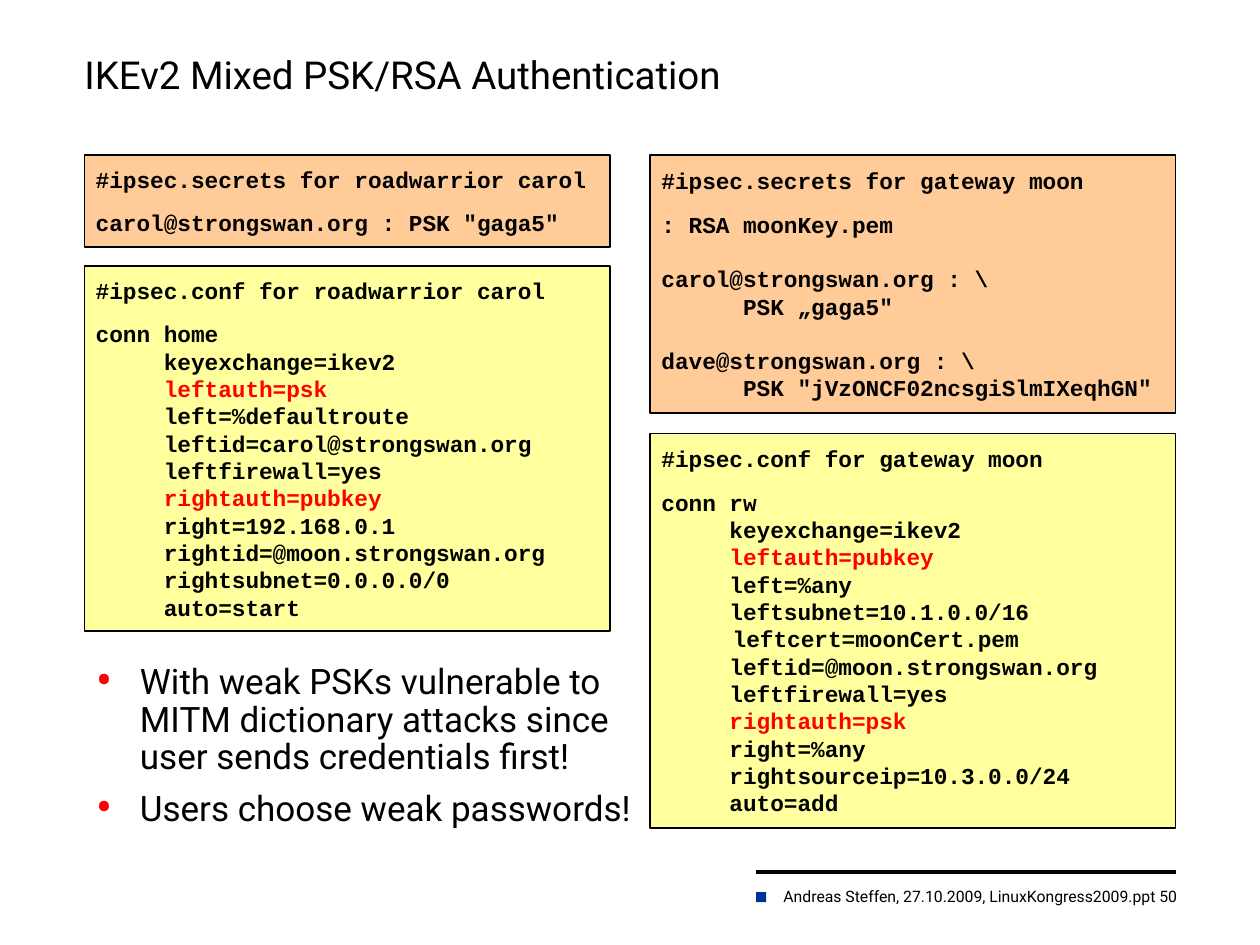
from lxml import etree
from pptx import Presentation
from pptx.dml.color import RGBColor
from pptx.enum.shapes import MSO_CONNECTOR, MSO_SHAPE
from pptx.enum.text import MSO_ANCHOR, MSO_AUTO_SIZE, PP_ALIGN
from pptx.oxml.ns import qn
from pptx.util import Inches, Pt

COLORS = {"text": "000000", "accent": "FF0000", "marker": "003399",
          "secrets": "FFCC99", "conf": "FFFF9D"}
BODY_FONT, CODE_FONT = "Roboto", "Courier New"
LEFT, RIGHT, PANEL_WIDTH = 0.67, 5.16, 4.17
SECTION_GAP, ENTRY_GAP = 9.3, 15.6
INDENT = 0.35

TITLE = "IKEv2 Mixed PSK/RSA Authentication"
FOOTER = "Andreas Steffen, 27.10.2009, LinuxKongress2009.ppt 50"
BULLETS = [
    "With weak PSKs vulnerable to\vMITM dictionary attacks since user sends credentials first!",
    "Users choose weak passwords!",
]

# Each panel: fill, left, top, height, header, entries (lists of code lines)
PANELS = [
    ("conf", LEFT, 2.11, 2.9, "#ipsec.conf for roadwarrior carol", [[
        "conn home",
        "     keyexchange=ikev2",
        "     leftauth=psk",
        "     left=%defaultroute",
        "     leftid=carol@strongswan.org",
        "     leftfirewall=yes",
        "     rightauth=pubkey",
        "     right=192.168.0.1",
        "     rightid=@moon.strongswan.org",
        "     rightsubnet=0.0.0.0/0",
        "     auto=start",
    ]]),
    ("conf", RIGHT, 3.44, 3.13, "#ipsec.conf for gateway moon", [[
        "conn rw",
        "     keyexchange=ikev2",
        "     leftauth=pubkey",
        "     left=%any",
        "     leftsubnet=10.1.0.0/16\v  leftcert=moonCert.pem",
        "     leftid=@moon.strongswan.org",
        "     leftfirewall=yes",
        "     rightauth=psk",
        "     right=%any",
        "     rightsourceip=10.3.0.0/24",
        "     auto=add",
    ]]),
    ("secrets", LEFT, 1.23, 0.73, "#ipsec.secrets for roadwarrior carol", [
        ['carol@strongswan.org : PSK "gaga5"'],
    ]),
    ("secrets", RIGHT, 1.23, 2.05, "#ipsec.secrets for gateway moon", [
        [": RSA moonKey.pem"],
        ["carol@strongswan.org : \\", '      PSK „gaga5"'],
        ["dave@strongswan.org : \\", '      PSK "jVzONCF02ncsgiSlmIXeqhGN"'],
    ]),
]


def rgb(name):
    return RGBColor.from_string(COLORS[name])


def place(shape, left, top, width, height):
    shape.left, shape.top = Inches(left), Inches(top)
    shape.width, shape.height = Inches(width), Inches(height)


def set_frame(frame, anchor, wrap, side=0.09, edge=0.05):
    frame.auto_size = MSO_AUTO_SIZE.NONE
    frame.vertical_anchor = anchor
    frame.word_wrap = wrap
    frame.margin_left = frame.margin_right = Inches(side)
    frame.margin_top = frame.margin_bottom = Inches(edge)


def add_text(para, text, size, font=BODY_FONT, color="text", bold=False):
    """Add one run per line of text, with line breaks at vertical tabs."""
    for number, part in enumerate(text.split("\v")):
        if number:
            para.add_line_break()
        span = para.add_run()
        span.text = part
        span.font.size, span.font.name, span.font.bold = Pt(size), font, bold
        span.font.color.rgb = rgb(color)


def set_hanging_indent(para):
    properties = para._p.get_or_add_pPr()
    properties.set("marL", str(Inches(INDENT)))
    properties.set("indent", str(-Inches(INDENT)))
    return properties


def add_bullet(para):
    properties = set_hanging_indent(para)
    color = etree.SubElement(properties, qn("a:buClr"))
    etree.SubElement(color, qn("a:srgbClr"), val=COLORS["accent"])
    etree.SubElement(properties, qn("a:buSzPct"), val="140000")
    etree.SubElement(properties, qn("a:buFont"), typeface=BODY_FONT)
    etree.SubElement(properties, qn("a:buChar"), char="•")


def next_paragraph(frame, index):
    return frame.add_paragraph() if index else frame.paragraphs[0]


def add_rectangle(page, fill, *bounds):
    box = page.shapes.add_shape(MSO_SHAPE.RECTANGLE, *map(Inches, bounds))
    box.shadow.inherit = False
    box.fill.solid()
    box.fill.fore_color.rgb = rgb(fill)
    return box


def add_panel(page, fill, left, top, height, header, entries):
    box = add_rectangle(page, fill, left, top, PANEL_WIDTH, height)
    box.line.color.rgb = rgb("text")
    box.line.width = Pt(1)
    frame = box.text_frame
    set_frame(frame, MSO_ANCHOR.MIDDLE, False)
    lines = [(header, 0)]
    for number, entry in enumerate(entries):
        gap = ENTRY_GAP if number else SECTION_GAP
        lines += [(line, 0 if row else gap) for row, line in enumerate(entry)]
    for index, (line, gap) in enumerate(lines):
        para = next_paragraph(frame, index)
        set_hanging_indent(para)
        para.alignment = PP_ALIGN.LEFT
        para.space_before = Pt(gap)
        color = "accent" if "auth=" in line else "text"
        add_text(para, line, 13, CODE_FONT, color, True)


def add_footer(page):
    rule = page.shapes.add_connector(
        MSO_CONNECTOR.STRAIGHT, Inches(6), Inches(6.92), Inches(9.33), Inches(6.92))
    rule.line.color.rgb = rgb("text")
    rule.line.width = Pt(2.25)
    etree.SubElement(rule._element.spPr, qn("a:effectLst"))
    box = page.shapes.add_textbox(Inches(6.06), Inches(7), Inches(3.36), Inches(0.23))
    set_frame(box.text_frame, MSO_ANCHOR.TOP, False, 0.08, 0.04)
    para = box.text_frame.paragraphs[0]
    para.alignment = PP_ALIGN.RIGHT
    add_text(para, FOOTER, 9)
    add_rectangle(page, "marker", 6, 7.08, 0.08, 0.08).line.fill.background()


def main():
    deck = Presentation()
    deck.slide_width, deck.slide_height = Inches(10), Inches(7.5)
    page = deck.slides.add_slide(deck.slide_layouts[1])

    title = page.shapes.title
    place(title, 0.58, 0.25, 6.46, 0.67)
    set_frame(title.text_frame, MSO_ANCHOR.MIDDLE, True)
    para = title.text_frame.paragraphs[0]
    para.alignment = PP_ALIGN.LEFT
    add_text(para, TITLE, 22)

    for panel in PANELS:
        add_panel(page, *panel)

    body = page.placeholders[1]
    place(body, LEFT, 5.22, 4.49, 1.09)
    set_frame(body.text_frame, MSO_ANCHOR.TOP, True)
    for index, text in enumerate(BULLETS):
        para = next_paragraph(body.text_frame, index)
        add_bullet(para)
        para.line_spacing = 0.9
        para.space_before = Pt(8 if index else 0)
        add_text(para, text, 20)

    add_footer(page)
    deck.save("out.pptx")


if __name__ == "__main__":
    main()
